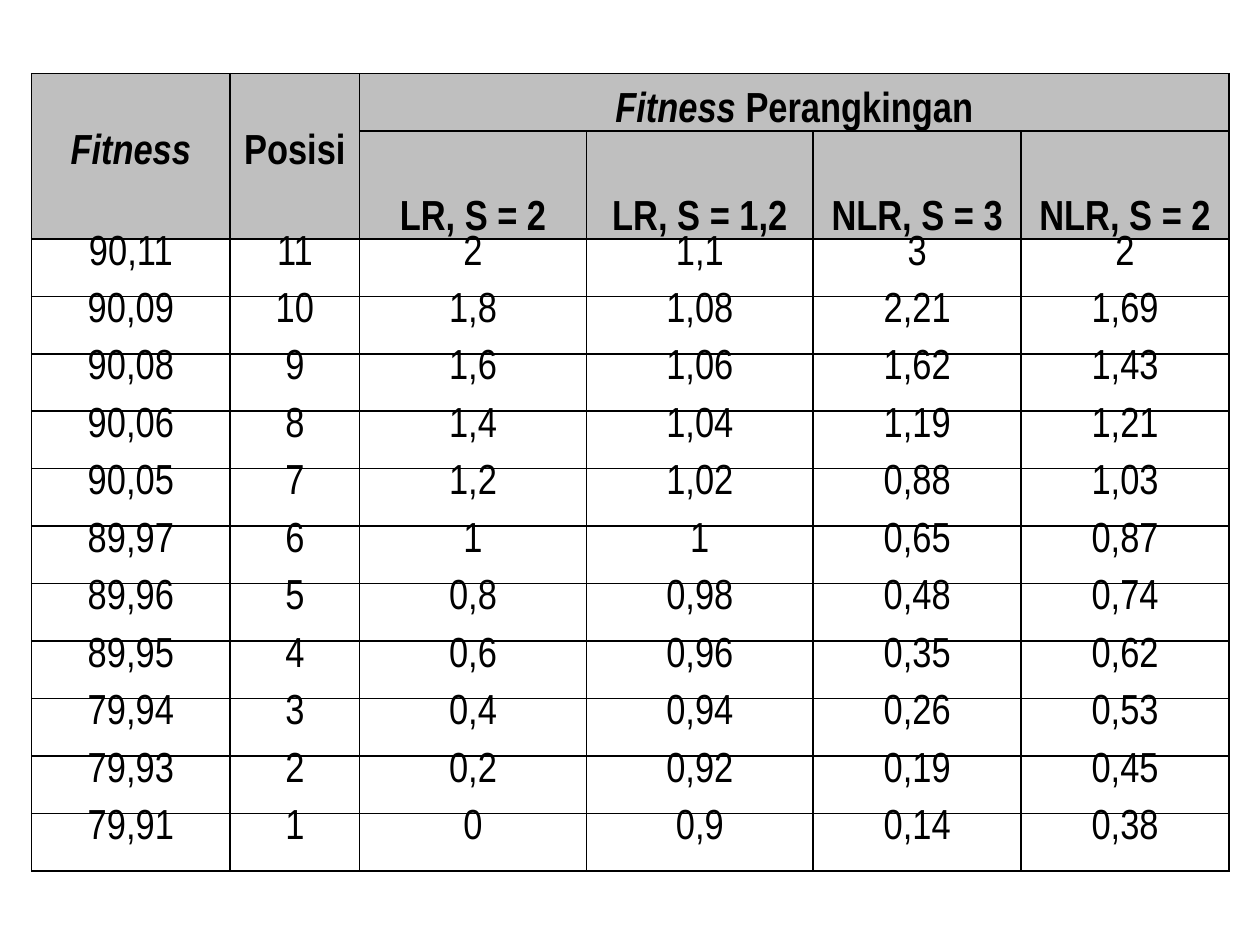
from lxml import etree
from pptx import Presentation
from pptx.dml.color import RGBColor
from pptx.enum import text
from pptx.oxml import ns
from pptx.util import Pt

BLACK = RGBColor(0, 0, 0)
GREY = RGBColor(0xBF, 0xBF, 0xBF)

HEADS = [
    ["Fitness", "Posisi", "Fitness Perangkingan", "", "", ""],
    ["", "", "LR, S = 2", "LR, S = 1,2", "NLR, S = 3", "NLR, S = 2"],
]
RANKS = [line.split() for line in """\
90,11 11 2 1,1 3 2
90,09 10 1,8 1,08 2,21 1,69
90,08 9 1,6 1,06 1,62 1,43
90,06 8 1,4 1,04 1,19 1,21
90,05 7 1,2 1,02 0,88 1,03
89,97 6 1 1 0,65 0,87
89,96 5 0,8 0,98 0,48 0,74
89,95 4 0,6 0,96 0,35 0,62
79,94 3 0,4 0,94 0,26 0,53
79,93 2 0,2 0,92 0,19 0,45
79,91 1 0 0,9 0,14 0,38""".splitlines()]
ROWS = HEADS + RANKS
WIDTHS = [113.5, 74, 129.6, 129.6, 118.8, 118.8]
HEIGHTS = [32.85, 61.7] + [32.85] * len(RANKS)


def border(cell):
    """Draw a thin black line on all four sides."""
    props = cell._tc.get_or_add_tcPr()
    for i, side in enumerate(("lnL", "lnR", "lnT", "lnB")):
        line = etree.Element(ns.qn("a:" + side), w=str(Pt(1)))
        fill = etree.SubElement(line, ns.qn("a:solidFill"))
        etree.SubElement(fill, ns.qn("a:srgbClr"), val=str(BLACK))
        props.insert(i, line)


prs = Presentation()
prs.slide_width, prs.slide_height = Pt(720), Pt(540)
slide = prs.slides.add_slide(prs.slide_layouts[6])
table = slide.shapes.add_table(
    len(ROWS), len(WIDTHS), Pt(18), Pt(42),
    Pt(sum(WIDTHS)), Pt(sum(HEIGHTS))).table
for col, width in zip(table.columns, WIDTHS):
    col.width = Pt(width)
for row, height in zip(table.rows, HEIGHTS):
    row.height = Pt(height)

for r, words in enumerate(ROWS):
    head = r < len(HEADS)
    for c, word in enumerate(words):
        cell = table.cell(r, c)
        cell.margin_left = cell.margin_right = Pt(5)
        cell.margin_top = cell.margin_bottom = 0
        if head:
            cell.fill.solid()
            cell.fill.fore_color.rgb = GREY
            cell.vertical_anchor = (
                text.MSO_ANCHOR.MIDDLE if c < 2 else text.MSO_ANCHOR.BOTTOM)
        else:
            cell.fill.background()
            cell.vertical_anchor = text.MSO_ANCHOR.TOP
        border(cell)
        para = cell.text_frame.paragraphs[0]
        para.alignment = text.PP_ALIGN.CENTER
        para.space_before = Pt(3)
        para.line_spacing = Pt(20)
        # The word Fitness is a run of its own, set in italics
        lead, mark, rest = word.rpartition("Fitness")
        for part in filter(None, (lead, mark, rest)):
            run = para.add_run()
            run.text = part
            font = run.font
            font.name, font.size = "Arial Narrow", Pt(24)
            font.bold, font.italic = head, part == "Fitness"
            font.color.rgb = BLACK

for c in (0, 1):
    table.cell(0, c).merge(table.cell(1, c))
table.cell(0, 2).merge(table.cell(0, 5))

prs.save("out.pptx")
